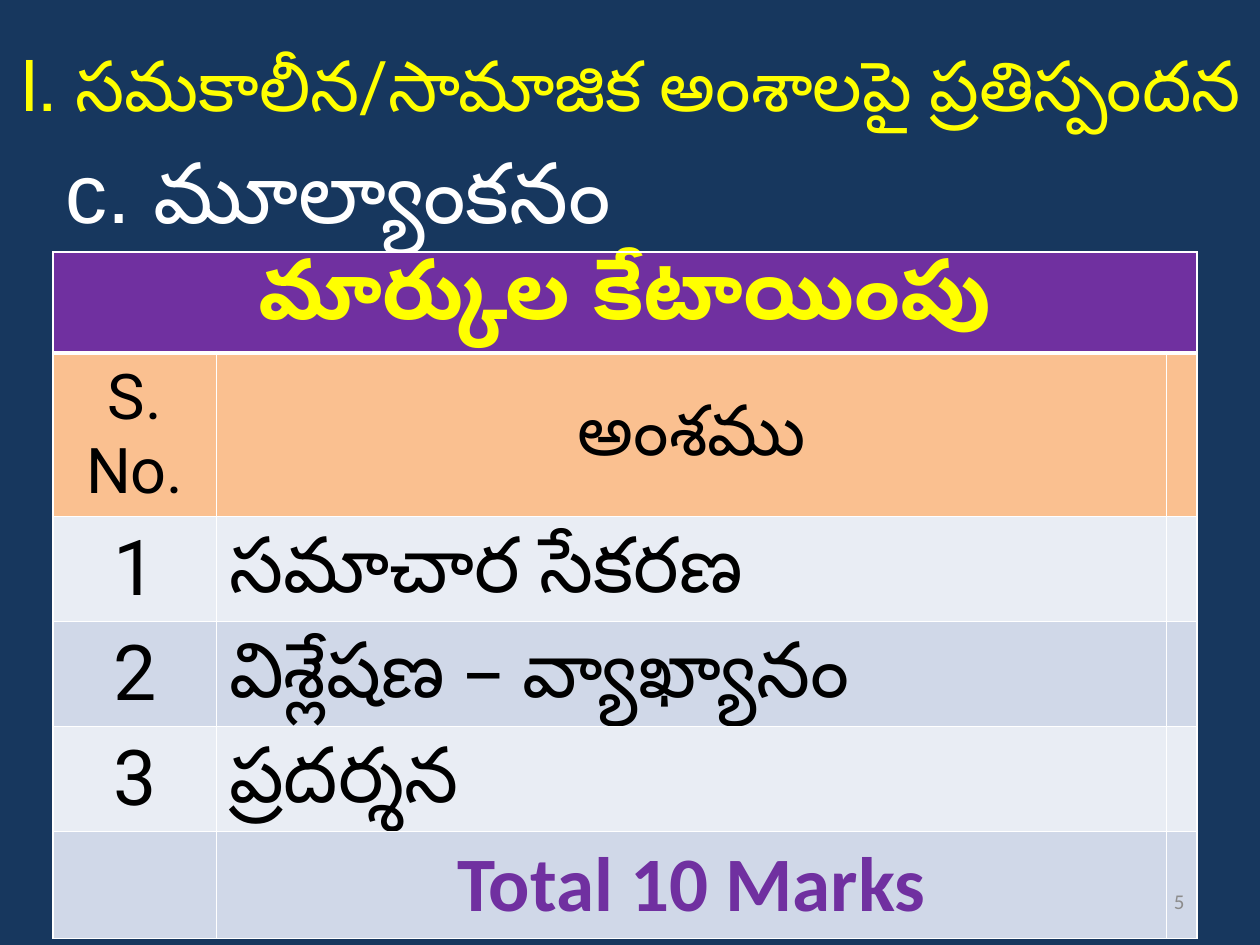
"""Build the slide on marks allotment for responding to contemporary issues."""
from lxml.etree import SubElement
from pptx import Presentation
from pptx.dml.color import RGBColor
from pptx.enum.text import MSO_ANCHOR as Anchor, PP_ALIGN as Align
from pptx.oxml.ns import qn
from pptx.util import Pt

NAVY = RGBColor(0x17, 0x37, 0x5E)
WHITE = RGBColor(0xFF, 0xFF, 0xFF)
BLACK = RGBColor(0, 0, 0)
YELLOW = RGBColor(0xFF, 0xFF, 0)
PURPLE = RGBColor(0x70, 0x30, 0xA0)
PEACH = RGBColor(0xFA, 0xC0, 0x90)
PALE = RGBColor(0xE9, 0xED, 0xF4)
BLUE = RGBColor(0xD0, 0xD8, 0xE8)
GRAY = RGBColor(0x8C, 0x8C, 0x8C)

TITLE = "సమకాలీన/సామాజిక అంశాలపై ప్రతిస్పందన"
SUBTITLE = "c. మూల్యాంకనం"
PAGE_NUMBER = "5"
ROWS = [
    ("మార్కుల కేటాయింపు", "", ""),
    ("S. No.", "అంశము", ""),
    ("1", "సమాచార సేకరణ", ""),
    ("2", "విశ్లేషణ – వ్యాఖ్యానం", ""),
    ("3", "ప్రదర్శన", ""),
    ("", "Total 10 Marks", ""),
]
FILLS = [PURPLE, PEACH, PALE, BLUE, PALE, BLUE]
ROW_HEIGHTS = [55, 92, 58.8, 58.8, 58.8, 61]
COLUMN_WIDTHS = [93.6, 542.9, 17.3]
TABLE_LEFT, TABLE_TOP = 30.2, 144


def write(frame, text, font, size, color, align, bold=False):
    para = frame.paragraphs[0]
    para.text = text
    para.alignment = align
    para.font.name = font
    para.font.size = Pt(size)
    para.font.bold = bold
    para.font.color.rgb = color
    return para


def add_text(page, area, *style):
    box = page.shapes.add_textbox(*map(Pt, area))
    box.text_frame.word_wrap = True
    box.text_frame.vertical_anchor = Anchor.MIDDLE
    return write(box.text_frame, *style)


def hang(para, indent):
    properties = para._p.get_or_add_pPr()
    properties.set("marL", str(Pt(indent)))
    properties.set("indent", str(-Pt(indent)))
    para.space_before = Pt(1)
    return properties


def add_borders(cell, widths):
    properties = cell._tc.get_or_add_tcPr()
    for side, width in zip("LRTB", widths):
        line = SubElement(properties, qn(f"a:ln{side}"), w=str(Pt(width)))
        fill = SubElement(line, qn("a:solidFill"))
        SubElement(fill, qn("a:srgbClr"), val=str(WHITE))


def cell_style(row, column):
    if row == 0:
        return "Arial", 48, YELLOW, Align.CENTER, True
    if row == 1:
        return "Roboto", 40 if column else 36, BLACK, Align.CENTER
    if row == len(ROWS) - 1:
        return "Calibri", 44, PURPLE, Align.CENTER, True
    return "Roboto", 44, BLACK, Align.LEFT if column else Align.CENTER


def add_marks_table(page):
    area = TABLE_LEFT, TABLE_TOP, sum(COLUMN_WIDTHS), sum(ROW_HEIGHTS)
    table = page.shapes.add_table(len(ROWS), len(COLUMN_WIDTHS), *map(Pt, area)).table
    table.first_row = table.horz_banding = False
    for column, width in zip(table.columns, COLUMN_WIDTHS):
        column.width = Pt(width)
    for r, texts in enumerate(ROWS):
        table.rows[r].height = Pt(ROW_HEIGHTS[r])
        for c, text in enumerate(texts):
            cell = table.cell(r, c)
            add_borders(cell, (1, 1, 3 if r == 1 else 1, 3 if r == 0 else 1))
            cell.fill.solid()
            cell.fill.fore_color.rgb = FILLS[r]
            cell.vertical_anchor = Anchor.MIDDLE
            if text:
                write(cell.text_frame, text, *cell_style(r, c))
    heading = table.cell(0, 0)
    heading.merge(table.cell(0, len(COLUMN_WIDTHS) - 1))
    heading.vertical_anchor = Anchor.TOP
    heading.margin_top = heading.margin_bottom = 0


def main():
    deck = Presentation()
    deck.slide_width, deck.slide_height = Pt(720), Pt(540)
    page = deck.slides.add_slide(deck.slide_layouts[6])
    page.background.fill.solid()
    page.background.fill.fore_color.rgb = NAVY

    subtitle = add_text(page, (TABLE_LEFT, 84.2, 653.8, 48.2),
                        SUBTITLE, "Arial", 48, WHITE, Align.LEFT)
    hang(subtitle, 36)
    add_marks_table(page)
    title = add_text(page, (0, 6.5, 720, 59),
                     TITLE, "Roboto", 40, YELLOW, Align.CENTER)
    title.line_spacing = 1.5
    SubElement(hang(title, 32), qn("a:buAutoNum"), type="romanUcPeriod")
    add_text(page, (516.2, 500.4, 167.8, 28.8),
             PAGE_NUMBER, "Calibri", 12, GRAY, Align.RIGHT)
    deck.save("out.pptx")


if __name__ == "__main__":
    main()
